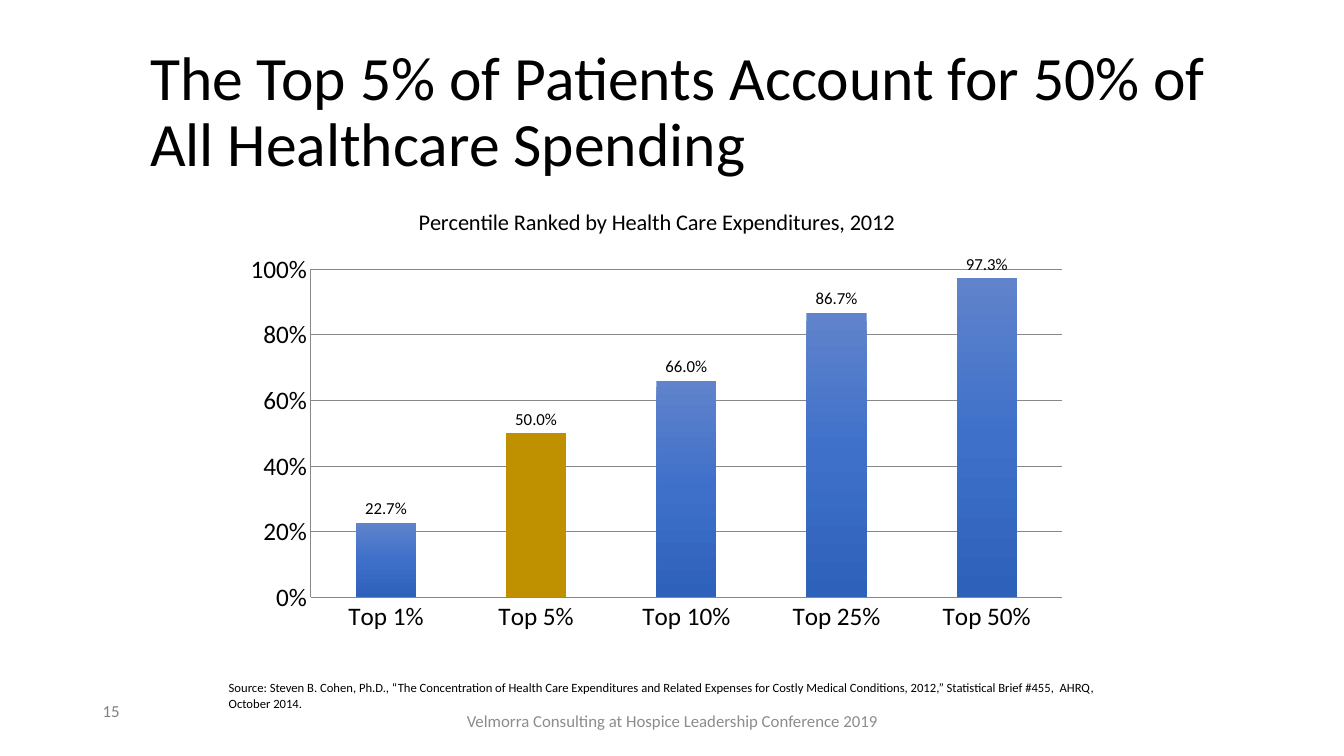
from copy import deepcopy

from pptx import Presentation
from pptx.chart.data import CategoryChartData
from pptx.dml.color import RGBColor
from pptx.enum.chart import XL_CHART_TYPE, XL_LABEL_POSITION, XL_TICK_MARK
from pptx.enum.text import MSO_ANCHOR, PP_ALIGN
from pptx.oxml import parse_xml
from pptx.oxml.ns import nsdecls
from pptx.util import Emu, Pt

EMU_PER_PX = 9144  # 100 px to the inch
COLORS = {
    "text": "000000",
    "number": "808080",
    "footer": "8C8C8C",
    "grid": "888888",
    "highlight": "BF9000",
    "bar_top": "6083CB",
    "bar_middle": "3E70CA",
    "bar_bottom": "2E61BA",
}
SPENDING = {
    "Top 1%": 0.227,
    "Top 5%": 0.5,
    "Top 10%": 0.66,
    "Top 25%": 0.867,
    "Top 50%": 0.973,
}


def px(length):
    return Emu(length * EMU_PER_PX)


def rgb(name):
    return RGBColor.from_string(COLORS[name])


class SlideBuilder:
    font_name = "Calibri"

    def __init__(self, slide):
        self.slide = slide

    def style_font(self, font, size, color="text"):
        font.name = self.font_name
        font.size = Pt(size)
        font.bold = False
        font.color.rgb = rgb(color)

    def text(self, box, content, size, color="text", anchor=MSO_ANCHOR.TOP,
             align=PP_ALIGN.LEFT, line_spacing=1.0):
        frame = self.slide.shapes.add_textbox(*map(px, box)).text_frame
        frame.word_wrap = True
        frame.vertical_anchor = anchor
        paragraph = frame.paragraphs[0]
        paragraph.text = content
        paragraph.alignment = align
        paragraph.line_spacing = line_spacing
        self.style_font(paragraph.font, size, color)

    def column_chart(self, box, title, values, highlighted):
        data = CategoryChartData()
        data.categories = list(values)
        data.add_series("Series 1", list(values.values()))
        chart = self.slide.shapes.add_chart(
            XL_CHART_TYPE.COLUMN_CLUSTERED, *map(px, box), data).chart
        self.style_font(chart.font, 18)
        chart.has_legend = False
        chart.has_title = True
        chart.chart_title.include_in_layout = False
        paragraph = chart.chart_title.text_frame.paragraphs[0]
        paragraph.text = title
        self.style_font(paragraph.font, 16)
        self.style_axes(chart)
        self.place_plot(chart, x=0.09, y=0.18, w=0.89, h=0.73)

        plot = chart.plots[0]
        plot.gap_width = 150
        plot.vary_by_categories = False
        series = plot.series[0]
        self.fill_bars(series)
        point_fill = series.points[highlighted].format.fill
        point_fill.solid()
        point_fill.fore_color.rgb = rgb("highlight")

        labels = series.data_labels
        labels.show_value = True
        labels.position = XL_LABEL_POSITION.OUTSIDE_END
        labels.number_format = "0.0%"
        labels.number_format_is_linked = False
        self.style_font(labels.font, 12)

    def style_axes(self, chart):
        for axis in (chart.category_axis, chart.value_axis):
            axis.major_tick_mark = XL_TICK_MARK.NONE
            axis.minor_tick_mark = XL_TICK_MARK.NONE
            axis.format.line.color.rgb = rgb("grid")
            self.style_font(axis.tick_labels.font, 18)
        value_axis = chart.value_axis
        value_axis.minimum_scale = 0
        value_axis.maximum_scale = 1
        value_axis.major_unit = 0.2
        value_axis.has_major_gridlines = True
        value_axis.major_gridlines.format.line.color.rgb = rgb("grid")
        value_axis.tick_labels.number_format = "0%"
        value_axis.tick_labels.number_format_is_linked = False

    def place_plot(self, chart, **fractions):
        """Fix the inner plot area at fractions of the chart frame."""
        sizes = "".join(f'<c:{key} val="{value}"/>' for key, value in fractions.items())
        layout = parse_xml(
            f'<c:layout {nsdecls("c")}><c:manualLayout><c:layoutTarget val="inner"/>'
            f'<c:xMode val="edge"/><c:yMode val="edge"/>{sizes}'
            "</c:manualLayout></c:layout>")
        plot_area = chart._chartSpace.chart.plotArea
        for automatic in plot_area.xpath("c:layout"):
            plot_area.remove(automatic)
        plot_area.insert(0, layout)

    def fill_bars(self, series):
        """Give the bars a three-stop gradient from top to bottom."""
        fill = series.format.fill
        fill.gradient()
        fill.gradient_angle = 270
        stop_list = series._element.xpath("c:spPr/a:gradFill/a:gsLst")[0]
        stop_list.append(deepcopy(stop_list[-1]))
        names = ("bar_top", "bar_middle", "bar_bottom")
        for index, (stop, name) in enumerate(zip(fill.gradient_stops, names)):
            stop.position = index / 2
            stop.color.rgb = rgb(name)


def main():
    presentation = Presentation()
    presentation.slide_width, presentation.slide_height = px(1333), px(750)
    builder = SlideBuilder(presentation.slides.add_slide(presentation.slide_layouts[6]))

    builder.text((139, 40, 1103, 145),
                 "The Top 5% of Patients Account for 50% of All Healthcare Spending",
                 44, anchor=MSO_ANCHOR.MIDDLE, line_spacing=0.9)
    builder.column_chart((233, 187, 837, 446),
                         "Percentile Ranked by Health Care Expenditures, 2012",
                         SPENDING, highlighted=1)
    builder.text((92, 690, 300, 40), "15", 12, "number")
    builder.text((217, 670, 892, 40),
                 "Source: Steven B. Cohen, Ph.D., “The Concentration of Health Care "
                 "Expenditures and Related Expenses for Costly Medical Conditions, 2012,” "
                 "Statistical Brief #455,  AHRQ, October 2014.", 9)
    builder.text((442, 695, 450, 40),
                 "Velmorra Consulting at Hospice Leadership Conference 2019",
                 12, "footer", MSO_ANCHOR.MIDDLE, PP_ALIGN.CENTER)
    presentation.save("out.pptx")


if __name__ == "__main__":
    main()
